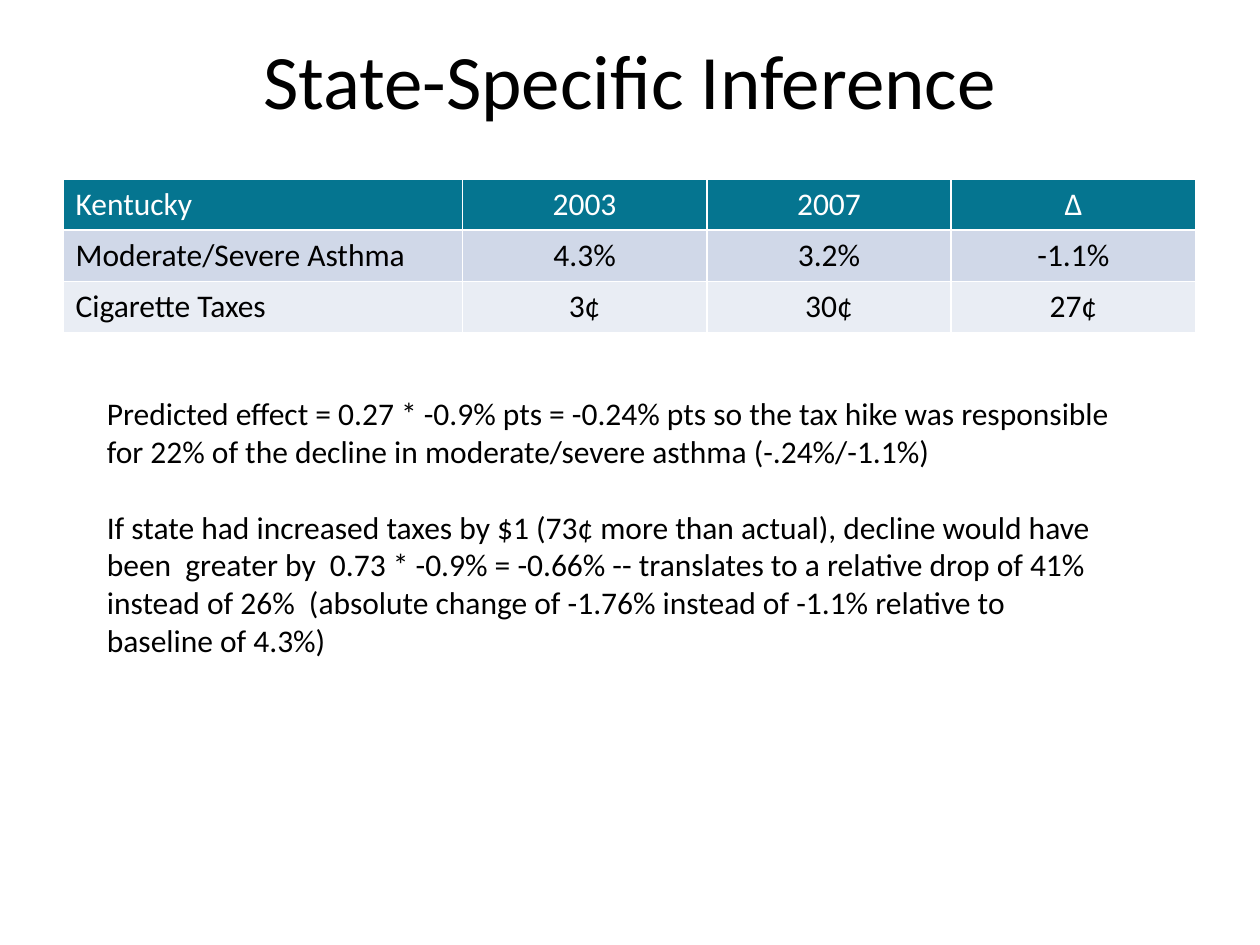
from lxml.etree import SubElement
from pptx import Presentation
from pptx.dml.color import RGBColor
from pptx.enum.text import MSO_ANCHOR, PP_ALIGN
from pptx.oxml.ns import qn
from pptx.util import Inches, Pt

COLORS = {
    "ink": "000000",
    "white": "FFFFFF",
    "head": "057590",
    "dark": "D0D8E8",
    "light": "E9EDF4",
}
ROWS = [
    ["Kentucky", "2003", "2007", "∆"],
    ["Moderate/Severe Asthma", "4.3%", "3.2%", "-1.1%"],
    ["Cigarette Taxes", "3¢", "30¢", "27¢"],
]
NOTES = [
    "Predicted effect = 0.27 * -0.9% pts = -0.24% pts so the tax hike was "
    "responsible for 22% of the decline in moderate/severe asthma (-.24%/-1.1%)",
    "If state had increased taxes by $1 (73¢ more than actual), decline would "
    "have been  greater by  0.73 * -0.9% = -0.66% -- translates to a relative "
    "drop of 41% instead of 26%  (absolute change of -1.76% instead of -1.1% "
    "relative to baseline of 4.3%)",
]


class Painter:
    def __init__(self, slide, font="Calibri"):
        self.slide = slide
        self.font = font

    def style(self, para, size=18, color="ink", **form):
        for name, value in form.items():
            setattr(para, name, value)
        for run in para.runs:
            look = {"name": self.font, "size": Pt(size)}
            for name, value in look.items():
                setattr(run.font, name, value)
            run.font.color.rgb = RGBColor.from_string(COLORS[color])

    def text(self, box, lines, anchor=MSO_ANCHOR.TOP, gap=0, **form):
        frame = self.slide.shapes.add_textbox(*map(Inches, box)).text_frame
        frame.word_wrap = True
        frame.vertical_anchor = anchor
        frame.text = "\n".join(lines)
        for index, para in enumerate(frame.paragraphs):
            self.style(para, space_before=Pt(gap if index else 0), **form)

    def border(self, cell, color="white", width=1):
        props = cell._tc.get_or_add_tcPr()
        for index, side in enumerate(("lnL", "lnR", "lnT", "lnB")):
            line = SubElement(props, qn(f"a:{side}"), w=str(Pt(width)))
            fill = SubElement(line, qn("a:solidFill"))
            SubElement(fill, qn("a:srgbClr"), val=COLORS[color])
            # Borders come before the cell fill
            props.insert(index, line)

    def table(self, box, rows, widths, fills):
        shape = self.slide.shapes.add_table(
            len(rows), len(widths), *map(Inches, box))
        grid = shape.table
        for col, width in zip(grid.columns, widths):
            col.width = Inches(width)
        for r, (row, fill) in enumerate(zip(rows, fills)):
            for c, value in enumerate(row):
                cell = grid.cell(r, c)
                cell.text = value
                cell.fill.solid()
                cell.fill.fore_color.rgb = RGBColor.from_string(COLORS[fill])
                self.border(cell)
                self.style(cell.text_frame.paragraphs[0],
                           color="ink" if r else "white",
                           alignment=PP_ALIGN.CENTER if c else PP_ALIGN.LEFT)


def main():
    deck = Presentation()
    deck.slide_width, deck.slide_height = Inches(10), Inches(7.5)
    paint = Painter(deck.slides.add_slide(deck.slide_layouts[6]))

    # Title
    paint.text((0.5, 0, 9, 1.25), ["State-Specific Inference"],
               anchor=MSO_ANCHOR.MIDDLE, size=44, alignment=PP_ALIGN.CENTER)

    # Kentucky table
    paint.table((0.5, 1.42, 9, 1.22), ROWS, [3.17] + [1.94] * 3,
                ["head", "dark", "light"])

    # Reading of the figures
    paint.text((0.75, 3.08, 8.17, 2.22), NOTES, gap=21.6)

    deck.save("out.pptx")


if __name__ == "__main__":
    main()
